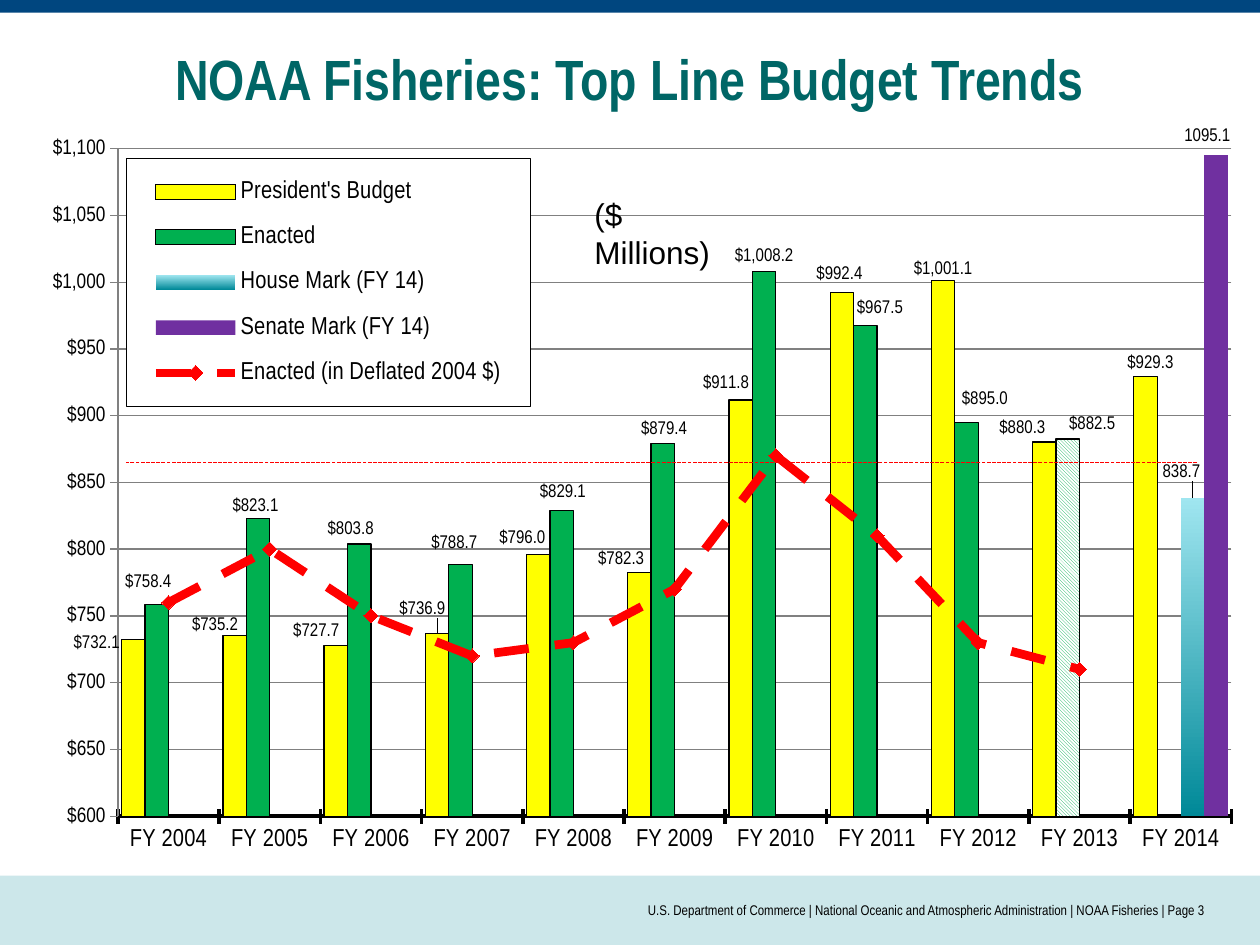
from lxml.etree import SubElement
from pptx import Presentation
from pptx.chart.data import CategoryChartData
from pptx.dml.color import RGBColor
from pptx.enum.chart import XL_CHART_TYPE, XL_LABEL_POSITION, XL_LEGEND_POSITION, XL_MARKER_STYLE, XL_TICK_MARK
from pptx.enum.dml import MSO_LINE, MSO_PATTERN
from pptx.enum.shapes import MSO_CONNECTOR, MSO_SHAPE
from pptx.enum.text import MSO_ANCHOR, PP_ALIGN
from pptx.oxml import parse_xml
from pptx.oxml.ns import nsdecls, qn
from pptx.util import Inches, Pt

BLACK = RGBColor(0, 0, 0)
WHITE = RGBColor(255, 255, 255)
GRAY = RGBColor(0x80, 0x80, 0x80)
NAVY = RGBColor(0x00, 0x46, 0x7F)
PALE = RGBColor(0xCC, 0xE7, 0xEA)
TEAL = RGBColor(0x00, 0x66, 0x66)
YELLOW = RGBColor(0xFF, 0xFF, 0x00)
GREEN = RGBColor(0x00, 0xB0, 0x50)
AQUA = RGBColor(0xA0, 0xE6, 0xF0)
DEEP_AQUA = RGBColor(0x00, 0x89, 0x98)
PURPLE = RGBColor(0x70, 0x30, 0xA0)
RED = RGBColor(0xFF, 0, 0)
NARROW = "Arial Narrow"
DOLLARS = '"$"#,##0.0'


def set_font(font, size, color=BLACK, name=NARROW):
    font.name, font.size, font.color.rgb = name, Pt(size), color


def layout_xml(**shares):
    modes = "".join(f'<c:{k}Mode val="edge"/>' for k in ("x", "y") if "w" in shares)
    values = "".join(f'<c:{k} val="{v}"/>' for k, v in shares.items())
    target = '<c:layoutTarget val="inner"/>' if shares.get("w", 0) > 0.5 else ""
    return parse_xml(f'<c:layout {nsdecls("c")}><c:manualLayout>{target}{modes}{values}'
                     '</c:manualLayout></c:layout>')


prs = Presentation()
prs.slide_width, prs.slide_height = Inches(10), Inches(7.5)
slide = prs.slides.add_slide(prs.slide_layouts[5])

for top, height, color in ((6.95, 0.55, PALE), (0, 0.1, NAVY)):
    band = slide.shapes.add_shape(MSO_SHAPE.RECTANGLE, 0, Inches(top), prs.slide_width, Inches(height))
    band.shadow.inherit = False
    band.fill.solid()
    band.fill.fore_color.rgb = color
    band.line.fill.background()

title = slide.shapes.title
title.left, title.top, title.width, title.height = Inches(0.5), Inches(0.25), Inches(9), Inches(0.74)
title.text_frame.text = "NOAA Fisheries: Top Line Budget Trends"
title.text_frame.vertical_anchor = MSO_ANCHOR.MIDDLE
heading = title.text_frame.paragraphs[0]
heading.alignment = PP_ALIGN.CENTER
set_font(heading.font, 32.4, TEAL)
heading.font.bold = True

budget = CategoryChartData()
budget.categories = [f"FY {year}" for year in range(2004, 2015)]
budget.add_series("President's Budget", [732.1, 735.2, 727.7, 736.9, 796, 782.3, 911.8, 992.4, 1001.1, 880.3, 929.3])
budget.add_series("Enacted", [758.4, 823.1, 803.8, 788.7, 829.1, 879.4, 1008.2, 967.5, 895, 882.5, None])
budget.add_series("House Mark (FY 14)", [None] * 10 + [838.7])
budget.add_series("Senate Mark (FY 14)", [None] * 10 + [1095.1])
budget.add_series("Enacted (in Deflated 2004 $)", [760, 800, 750, 720, 730, 770, 870, 810, 730, 710, None])
chart = slide.shapes.add_chart(XL_CHART_TYPE.COLUMN_CLUSTERED, Inches(0.18), Inches(0.99),
                               Inches(9.69), Inches(5.96), budget).chart
chart.has_title = False
set_font(chart.font, 18)

columns = chart.plots[0]
columns.gap_width, columns.overlap, columns.vary_by_categories = 32, 0, False
column_xml = chart.element.find(".//" + qn("c:barChart"))
deflated_xml = column_xml.findall(qn("c:ser"))[-1]
for bar_only in deflated_xml.findall(qn("c:invertIfNegative")):
    deflated_xml.remove(bar_only)
line_xml = parse_xml(f'<c:lineChart {nsdecls("c")}><c:grouping val="standard"/>'
                     '<c:varyColors val="0"/></c:lineChart>')
line_xml.append(deflated_xml)
SubElement(line_xml, qn("c:marker")).set("val", "1")
for axis_id in column_xml.findall(qn("c:axId")):
    SubElement(line_xml, qn("c:axId")).set("val", axis_id.get("val"))
column_xml.addnext(line_xml)

president, enacted, house, senate = columns.series
for series, color in ((president, YELLOW), (enacted, GREEN), (senate, PURPLE)):
    series.format.fill.solid()
    series.format.fill.fore_color.rgb = color
for outlined in (president, enacted, enacted.points[9]):
    outlined.format.line.color.rgb = BLACK
    outlined.format.line.width = Pt(0.75)
house.format.fill.gradient()
house.format.fill.gradient_angle = 270
for stop, color in zip(house.format.fill.gradient_stops, (AQUA, DEEP_AQUA)):
    stop.color.rgb = color
hatch = enacted.points[9].format.fill
hatch.patterned()
hatch.pattern = MSO_PATTERN.DARK_DOWNWARD_DIAGONAL
hatch.fore_color.rgb, hatch.back_color.rgb = GREEN, WHITE

label_shifts = (
    (president, DOLLARS, 0, [(-30, 24), (-16, 5), (-16, 0), (-12, -13), (-13, -3), (-15, 1),
                             (-12, -3), (-2, -5), (0, 3), (-18, 1), (4, 1)]),
    (enacted, DOLLARS, 0, [(-7, -11), (-2, 3), (-7, -1), (-5, -9), (1, -5), (1, 0),
                           (0, -1), (12, -5), (15, -12), (20, -1)]),
    (house, "General", 10, [(-9, -15)]),
    (senate, "General", 10, [(-7, -7)]),
)
for series, number_format, first, shifts in label_shifts:
    labels = series.data_labels
    labels.show_value = True
    labels.number_format, labels.number_format_is_linked = number_format, False
    set_font(labels.font, 10.5)
    for index in range(first, first + len(shifts)):
        label = series.points[index].data_label
        set_font(label.font, 10.5)
        label.position = XL_LABEL_POSITION.OUTSIDE_END
    for label_xml, (across, down) in zip(labels._element.findall(qn("c:dLbl")), shifts):
        number_xml = parse_xml(f'<c:numFmt {nsdecls("c")} sourceLinked="0"/>')
        number_xml.set("formatCode", number_format)
        label_xml.insert(1, number_xml)
        label_xml.insert(1, layout_xml(x=across / 1000, y=down / 1000))

deflated = chart.plots[1].series[0]
deflated.smooth = False
deflated.format.line.color.rgb = RED
deflated.format.line.width = Pt(5)
deflated.format.line.dash_style = MSO_LINE.DASH
deflated.marker.style, deflated.marker.size = XL_MARKER_STYLE.DIAMOND, 8
deflated.marker.format.fill.solid()
deflated.marker.format.fill.fore_color.rgb = RED
deflated.marker.format.line.color.rgb = RED

years, dollars = chart.category_axis, chart.value_axis
years.major_tick_mark = XL_TICK_MARK.CROSS
years.format.line.color.rgb = BLACK
years.format.line.width = Pt(2)
set_font(years.tick_labels.font, 14)
dollars.minimum_scale, dollars.maximum_scale, dollars.major_unit = 600, 1100, 50
dollars.major_tick_mark = XL_TICK_MARK.OUTSIDE
dollars.has_major_gridlines = True
for rule in (dollars, dollars.major_gridlines):
    rule.format.line.color.rgb = GRAY
    rule.format.line.width = Pt(0.75)
dollars.tick_labels.number_format = '"$"#,##0'
dollars.tick_labels.number_format_is_linked = False
set_font(dollars.tick_labels.font, 12)

plot_xml = chart.element.find(".//" + qn("c:plotArea"))
for old in plot_xml.findall(qn("c:layout")):
    plot_xml.remove(old)
plot_xml.insert(0, layout_xml(x=0.078, y=0.032, w=0.912, h=0.889))

chart.has_legend = True
legend = chart.legend
legend.position = XL_LEGEND_POSITION.RIGHT
legend.include_in_layout = False
set_font(legend.font, 14)
legend_xml = legend._element
for old in legend_xml.findall(qn("c:layout")):
    legend_xml.remove(old)
legend_xml.find(qn("c:overlay")).addprevious(layout_xml(x=0.085, y=0.045, w=0.331, h=0.33))
legend_xml.find(qn("c:overlay")).addnext(parse_xml(
    f'<c:spPr {nsdecls("c", "a")}><a:solidFill><a:srgbClr val="FFFFFF"/></a:solidFill>'
    '<a:ln w="9525"><a:solidFill><a:srgbClr val="000000"/></a:solidFill></a:ln></c:spPr>'))

unit = slide.shapes.add_textbox(Inches(4.62), Inches(1.5), Inches(1.2), Inches(0.4)).text_frame
unit.word_wrap = True
unit.text = "($ Millions)"
set_font(unit.paragraphs[0].font, 18, name="Arial")

threshold = slide.shapes.add_connector(MSO_CONNECTOR.STRAIGHT, Inches(9.5), Inches(3.67), Inches(1), Inches(3.67))
threshold.line.color.rgb = RED
threshold.line.width = Pt(0.75)
threshold.line.dash_style = MSO_LINE.SQUARE_DOT
SubElement(threshold._element.spPr, qn("a:effectLst"))

footer = slide.shapes.add_textbox(Inches(2.38), Inches(6.95), Inches(7.19), Inches(0.55)).text_frame
footer.word_wrap = True
footer.margin_left = footer.margin_right = 0
footer.vertical_anchor = MSO_ANCHOR.MIDDLE
footer.text = "U.S. Department of Commerce | National Oceanic and Atmospheric Administration | NOAA Fisheries | Page 3"
footer.paragraphs[0].alignment = PP_ALIGN.RIGHT
set_font(footer.paragraphs[0].font, 8)

prs.save("out.pptx")
